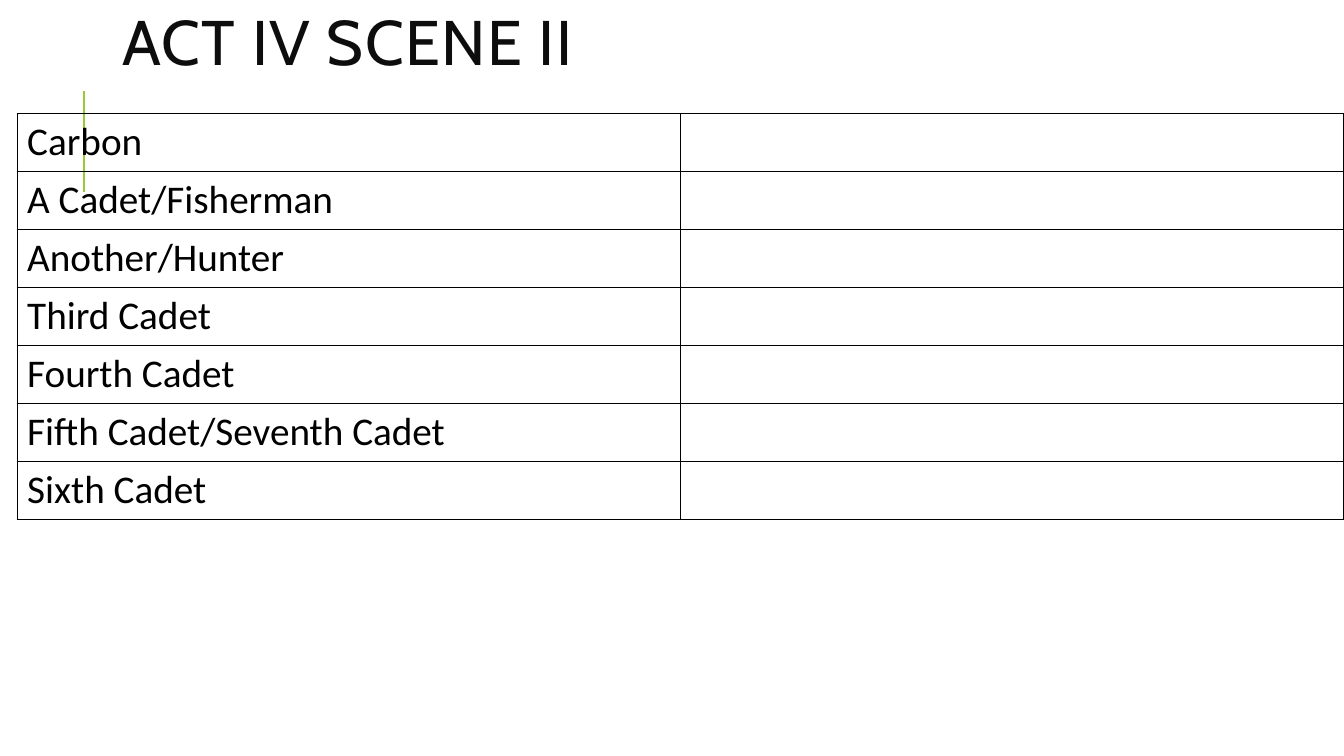
from lxml import etree
from pptx import Presentation
from pptx.dml.color import RGBColor
from pptx.enum.shapes import MSO_CONNECTOR
from pptx.enum.text import MSO_ANCHOR, MSO_AUTO_SIZE, PP_ALIGN
from pptx.oxml import parse_xml
from pptx.oxml.ns import nsdecls, qn
from pptx.util import Pt

STRAIGHT = MSO_CONNECTOR.STRAIGHT
MIDDLE = MSO_ANCHOR.MIDDLE
NO_AUTOFIT = MSO_AUTO_SIZE.NONE
LEFT = PP_ALIGN.LEFT

BLACK = RGBColor(0x00, 0x00, 0x00)
TITLE_INK = RGBColor(0x0D, 0x0D, 0x0D)
GREEN = RGBColor(0x99, 0xCB, 0x38)

TITLE_ONLY = 5
ROLES = [
    "Carbon",
    "A Cadet/Fisherman",
    "Another/Hunter",
    "Third Cadet",
    "Fourth Cadet",
    "Fifth Cadet/Seventh Cadet",
    "Sixth Cadet",
]


def add_title(page, text, left, top, width, height):
    title = page.shapes.title
    title.left, title.top = Pt(left), Pt(top)
    title.width, title.height = Pt(width), Pt(height)
    frame = title.text_frame
    frame.text = text
    frame.word_wrap = True
    frame.auto_size = NO_AUTOFIT
    frame.vertical_anchor = MIDDLE
    para = frame.paragraphs[0]
    para.alignment = LEFT
    para.line_spacing = 0.8
    para.font.name = "Cabin"
    para.font.size = Pt(45)
    para.font.color.rgb = TITLE_INK
    # Letter spacing of one point
    para.runs[0].font.language_id = None
    para.runs[0]._r.get_or_add_rPr().set("spc", "100")


def add_accent_line(page, left, top, height):
    line = page.shapes.add_connector(
        STRAIGHT, Pt(left), Pt(top + height), Pt(left), Pt(top))
    line.line.color.rgb = GREEN
    line.line.width = Pt(1.5)
    etree.SubElement(line._element.spPr, qn("a:effectLst"))


def add_borders(cell):
    properties = cell._tc.get_or_add_tcPr()
    for position, side in enumerate(("lnL", "lnR", "lnT", "lnB")):
        properties.insert(position, parse_xml(
            f'<a:{side} {nsdecls("a")} w="{Pt(1)}"><a:solidFill>'
            f'<a:srgbClr val="{BLACK}"/></a:solidFill></a:{side}>'))


def add_cast_table(page, roles, left, top, width, row_height):
    table = page.shapes.add_table(
        len(roles), 2, Pt(left), Pt(top), Pt(width),
        Pt(row_height * len(roles))).table
    table.first_row = False
    table.horz_banding = False
    for row, role in zip(table.rows, roles):
        row.height = Pt(row_height)
        row.cells[0].text = role
        for cell in row.cells:
            cell.fill.background()
            add_borders(cell)
            font = cell.text_frame.paragraphs[0].font
            font.name = "Calibri"
            font.size = Pt(28)
            font.color.rgb = BLACK


def build_cast_slide(deck):
    page = deck.slides.add_slide(deck.slide_layouts[TITLE_ONLY])
    # Heading
    add_title(page, "ACT IV SCENE II", 80, 8.5, 765.5, 50.5)
    # Green accent behind the table
    add_accent_line(page, 60, 65, 72)
    # Roles, with an empty column for the actors
    add_cast_table(page, ROLES, 12.25, 81, 947.75, 41.4)


def main():
    deck = Presentation()
    deck.slide_width, deck.slide_height = Pt(960), Pt(540)
    build_cast_slide(deck)
    deck.save("out.pptx")


if __name__ == "__main__":
    main()
